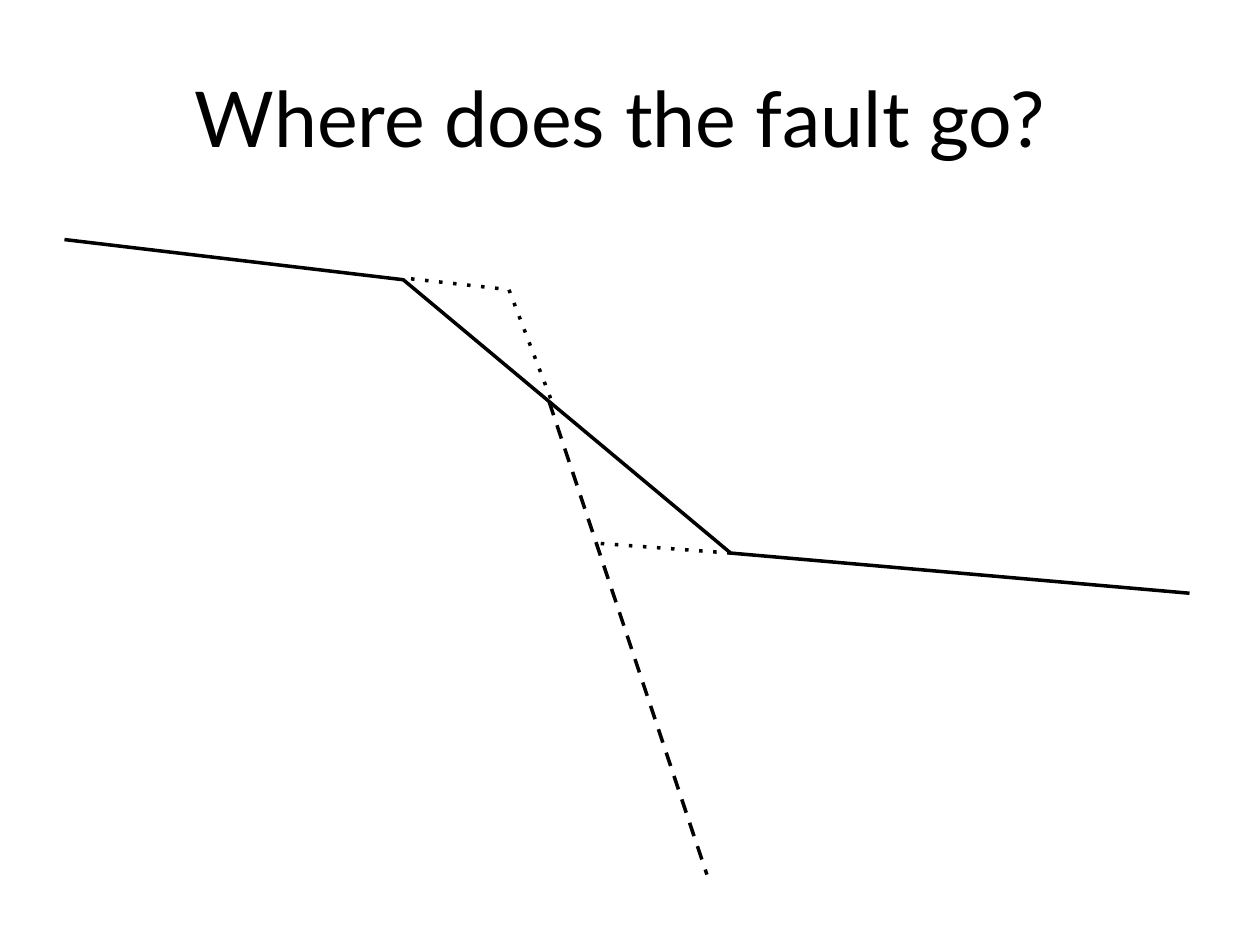
import pptx
import pptx.dml.color
import pptx.enum.shapes
import pptx.enum.text
import pptx.oxml
import pptx.oxml.ns
import pptx.util
from lxml import etree

Cm = pptx.util.Cm
Pt = pptx.util.Pt


def rgb(value):
    return pptx.dml.color.RGBColor.from_string(value)


def write(tf, text, font="Lato", size=44, color="000000",
          align=pptx.enum.text.PP_ALIGN.CENTER):
    p = tf.paragraphs[0]
    p.alignment = align
    r = p.add_run()
    r.text = text
    r.font.name = font
    r.font.size = Pt(size)
    r.font.color.rgb = rgb(color)


class Deck:
    ink = "000000"
    weight = 2

    def __init__(self, prs):
        self.s = prs.slides.add_slide(prs.slide_layouts[5])

    def title(self, text, left, top, width, height):
        sp = self.s.shapes.title
        sp.left, sp.top, sp.width, sp.height = map(Cm, (left, top, width, height))
        tf = sp.text_frame
        tf.word_wrap = True
        tf.vertical_anchor = pptx.enum.text.MSO_ANCHOR.MIDDLE
        write(tf, text, color=self.ink)

    def stroke(self, sp, dash):
        sp.line.color.rgb = rgb(self.ink)
        sp.line.width = Pt(self.weight)
        if dash:
            ln = sp.line.fill._xPr
            etree.SubElement(ln, pptx.oxml.ns.qn("a:prstDash"), val=dash)

    def line(self, start, end, dash=None):
        sp = self.s.shapes.add_connector(
            pptx.enum.shapes.MSO_CONNECTOR.STRAIGHT, *map(Cm, start + end))
        self.stroke(sp, dash)
        etree.SubElement(sp._element.spPr, pptx.oxml.ns.qn("a:effectLst"))

    def polyline(self, points, dash=None):
        pts = [(Cm(x), Cm(y)) for x, y in points]
        fb = self.s.shapes.build_freeform(*pts[0])
        fb.add_line_segments(pts[1:], close=False)
        sp = fb.convert_to_shape()
        sp.fill.background()
        self.stroke(sp, dash)
        sp.shadow.inherit = False


def main():
    prs = pptx.Presentation()
    prs.slide_width, prs.slide_height = Cm(25.4), Cm(19.05)
    deck = Deck(prs)
    scarp_base = (14.73, 11.15)
    deck.title("Where does the fault go? ", 1.27, 0.76, 22.86, 3.18)
    deck.polyline([(1.3, 4.83), (8.13, 5.64), scarp_base, (23.98, 11.96)])
    deck.line((11.07, 8.1), (14.25, 17.63), "dash")
    deck.polyline([(11.1, 8.03), (10.26, 5.84), (8.18, 5.61)], "dot")
    deck.line(scarp_base, (12.01, 10.95), "dot")
    prs.save("out.pptx")


if __name__ == "__main__":
    main()
